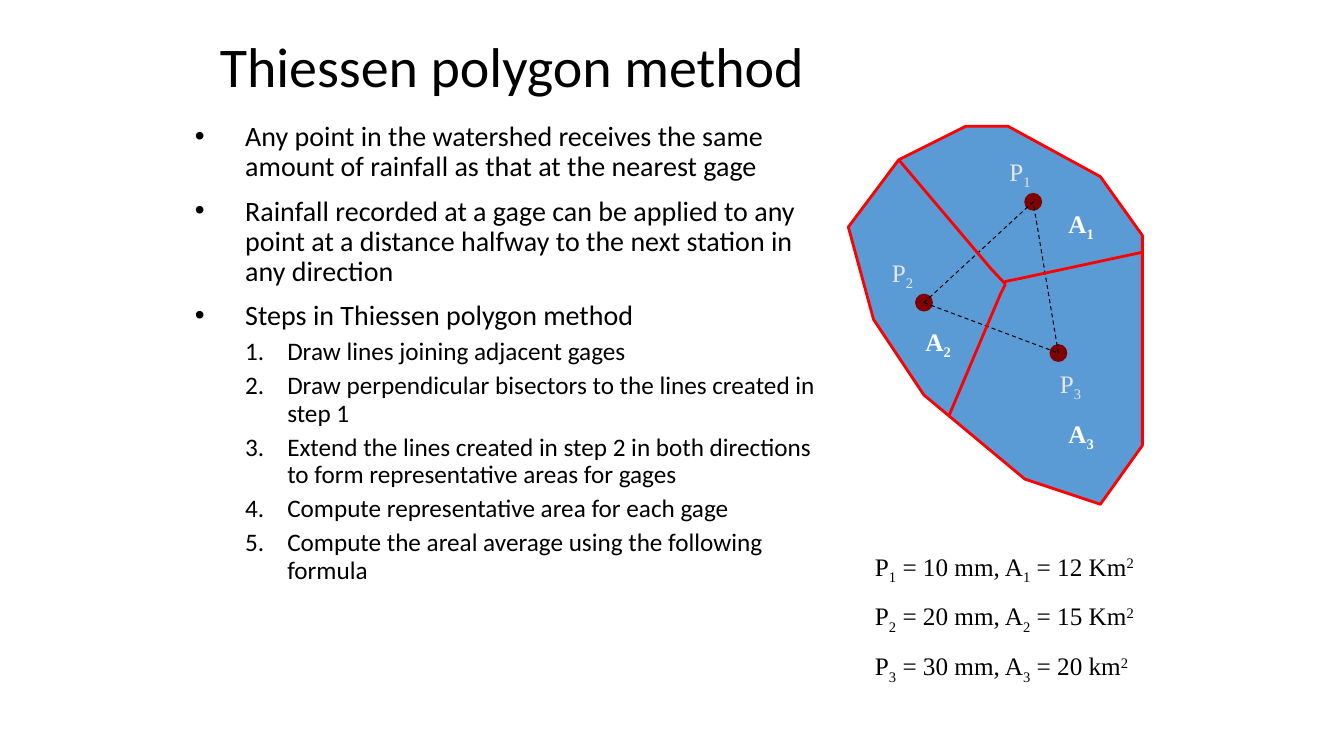
import pptx
import pptx.util
import pptx.dml.color
import pptx.enum.dml
import pptx.enum.shapes
import pptx.enum.text
from lxml import etree

Cm, Pt = pptx.util.Cm, pptx.util.Pt
SERIF = "Times New Roman"
SUB, SUP = -25000, 30000
NS = "{http://schemas.openxmlformats.org/drawingml/2006/main}"

TITLE = "Thiessen polygon method"
POINTS = [
    "Any point in the watershed receives the same amount of rainfall as that at the nearest gage",
    "Rainfall recorded at a gage can be applied to any point at a distance halfway to the next station in any direction",
    "Steps in Thiessen polygon method",
]
STEPS = [
    "Draw lines joining adjacent gages",
    "Draw perpendicular bisectors to the lines created in step 1",
    "Extend the lines created in step 2 in both directions to form representative areas for gages",
    "Compute representative area for each gage",
    "Compute the areal average using the following formula",
]
RAIN = [("10", "12 Km"), ("20", "15 Km"), ("30", "20 km")]

# Map data, in grid units from the map's top left corner
COLS = 35
SHED = [(14, 0), (6, 4), (0, 12), (3, 23), (9, 32), (21, 42), (30, 45),
        (35, 38), (35, 27), (35, 13), (30, 6), (19, 0)]
CUTS = [[(6, 4), (17, 17), (18.7, 18.8)],
        [(12, 34.4), (18.1, 20), (18.7, 18.8)],
        [(35, 15), (21, 18), (18.6, 18.5)]]
GAGES = [(22, 9), (9, 21), (25, 27)]
TAGS = [(18, 3), (4, 15), (24, 28.2)]
AREAS = [(25, 9.2), (8, 23.2), (25, 34.2)]


def color(code):
    return pptx.dml.color.RGBColor.from_string(code)


def apply(item, style):
    for name, value in style.items():
        setattr(item, name, value)


def stroke(shape, code, width, dash=None):
    shape.line.color.rgb = color(code)
    apply(shape.line, {"width": Pt(width), "dash_style": dash})


def frame(slide, box, anchor="TOP"):
    text = slide.shapes.add_textbox(*box).text_frame
    apply(text, {"word_wrap": True,
                 "vertical_anchor": getattr(pptx.enum.text.MSO_ANCHOR, anchor)})
    return text


def add_run(par, words, size, font="Calibri", code="000000", bold=None, shift=0):
    run = par.add_run()
    run.text = words
    apply(run.font, {"size": Pt(size), "name": font, "bold": bold})
    run.font.color.rgb = color(code)
    if shift:
        run._r.get_or_add_rPr().set("baseline", str(shift))


def add_par(text, index):
    return text.add_paragraph() if index else text.paragraphs[0]


def add_title(slide, box):
    par = frame(slide, box, "MIDDLE").paragraphs[0]
    par.line_spacing = 0.9
    add_run(par, TITLE, 40)


def add_list(slide, box):
    text = frame(slide, box)
    # Level, size, space before, left margin, hanging indent, bullet tag and its attributes
    dot = (0, 20, 10, 1.27, 1.27, "buChar", {"char": "•"})
    num = (1, 18, 5, 2.33, 1.06, "buAutoNum", {"type": "arabicPeriod"})
    rows = [(words, dot) for words in POINTS] + [(words, num) for words in STEPS]
    for i, (words, kind) in enumerate(rows):
        level, size, gap, left, hang, tag, mark = kind
        par = add_par(text, i)
        apply(par, {"level": level, "line_spacing": 0.9, "space_before": Pt(gap)})
        props = par._p.get_or_add_pPr()
        props.set("marL", str(Cm(left)))
        props.set("indent", str(-Cm(hang)))
        if tag == "buChar":
            etree.SubElement(props, NS + "buFont", {"typeface": "Arial"})
        etree.SubElement(props, NS + tag, mark)
        add_run(par, words, size)


def add_map(slide, box):
    left, top, width, _ = box
    unit = width / COLS
    shapes = slide.shapes

    def place(spot):
        return round(left + spot[0] * unit), round(top + spot[1] * unit)

    def trace(spots, close):
        first, *rest = [place(spot) for spot in spots]
        pen = shapes.build_freeform(*first)
        pen.add_line_segments(rest, close=close)
        shape = pen.convert_to_shape()
        shape.shadow.inherit = False
        stroke(shape, "FF0000", 2)
        return shape

    def label(spot, letter, index, code, bold):
        par = frame(slide, (*place(spot), Cm(1.27), Cm(1.02))).paragraphs[0]
        add_run(par, letter, 18, SERIF, code, bold)
        add_run(par, str(index), 18, SERIF, code, bold, SUB)

    # Watershed
    land = trace(SHED, True)
    land.fill.solid()
    land.fill.fore_color.rgb = color("5B9BD5")

    # Gages
    for i, ((x, y), spot) in enumerate(zip(GAGES, TAGS), 1):
        dot = shapes.add_shape(pptx.enum.shapes.MSO_SHAPE.OVAL,
                               *place((x - 1, y - 1)), round(2 * unit), round(2 * unit))
        dot.shadow.inherit = False
        dot.fill.solid()
        dot.fill.fore_color.rgb = color("800000")
        stroke(dot, "800000", 0.75)
        label(spot, "P", i, "E7E6E6", None)

    # Lines joining the gages
    for i, gage in enumerate(GAGES):
        link = shapes.add_connector(pptx.enum.shapes.MSO_CONNECTOR.STRAIGHT,
                                    *place(GAGES[i - 1]), *place(gage))
        stroke(link, "000000", 0.75, pptx.enum.dml.MSO_LINE.DASH)
        etree.SubElement(link._element.spPr, NS + "effectLst")

    # Bisectors and area names
    for cut in CUTS:
        trace(cut, False).fill.background()
    for i, spot in enumerate(AREAS, 1):
        label(spot, "A", i, "FFFFFF", True)


def add_data(slide, box):
    text = frame(slide, box)
    for i, (rain, area) in enumerate(RAIN):
        par = add_par(text, i)
        par.space_before = Pt(11)
        index = str(i + 1)
        for words, shift in [("P", 0), (index, SUB), (f" = {rain} mm, A", 0),
                             (index, SUB), (f" = {area}", 0), ("2", SUP)]:
            add_run(par, words, 18, SERIF, shift=shift)


def main():
    deck = pptx.Presentation()
    apply(deck, {"slide_width": Cm(33.87), "slide_height": Cm(19.05)})
    slide = deck.slides.add_slide(deck.slide_layouts[6])
    add_title(slide, (Cm(5.29), Cm(0.76), Cm(22.86), Cm(1.98)))
    add_map(slide, (Cm(21.38), Cm(3.18), Cm(7.41), Cm(9.53)))
    add_list(slide, (Cm(4.66), Cm(2.96), Cm(16.3), Cm(12.9)))
    add_data(slide, (Cm(21.8), Cm(13.76), Cm(7.2), Cm(3.3)))
    deck.save("out.pptx")


if __name__ == "__main__":
    main()
